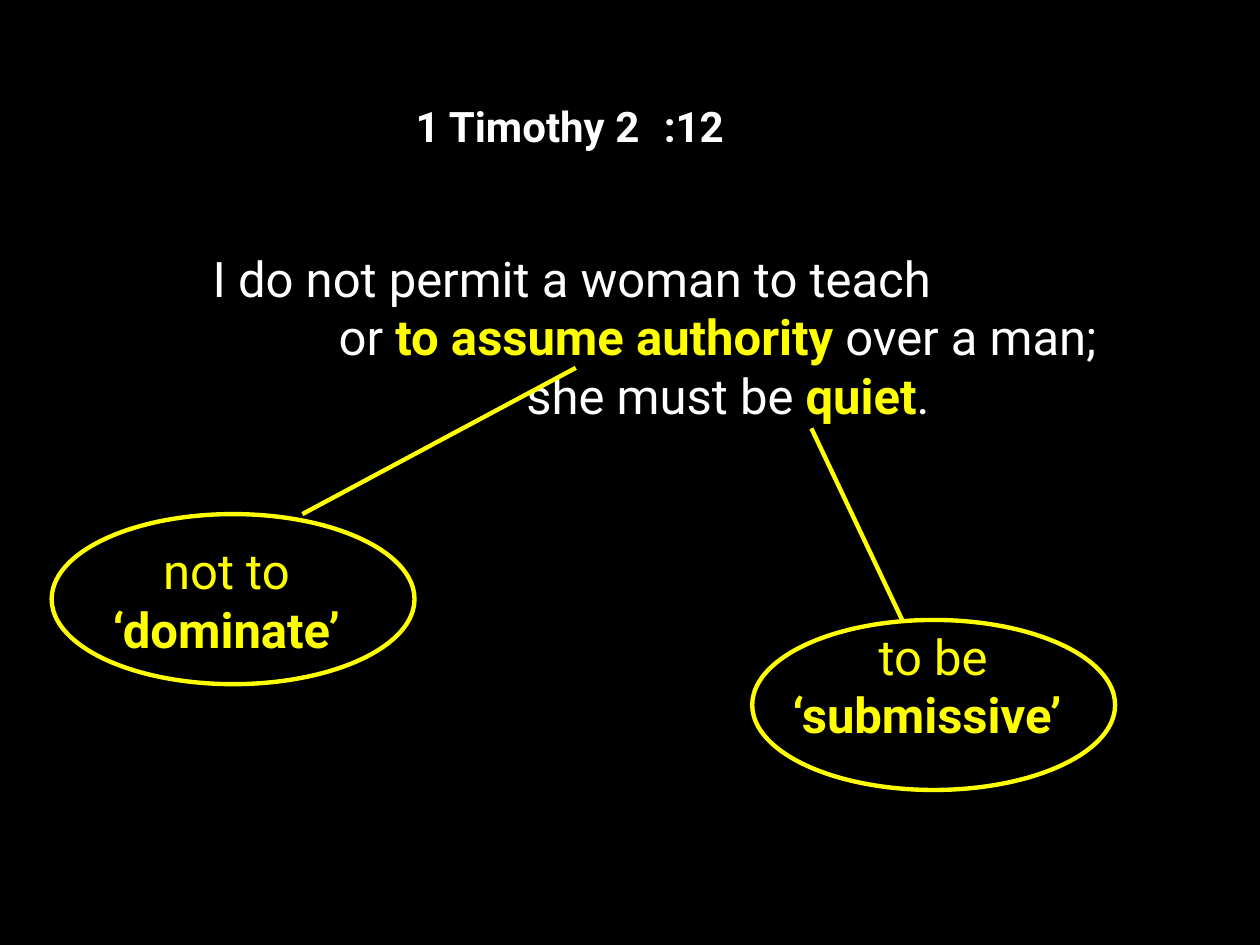
from lxml.etree import SubElement
from pptx import Presentation
from pptx.dml.color import RGBColor
from pptx.enum.shapes import MSO_CONNECTOR, MSO_SHAPE
from pptx.enum.text import MSO_AUTO_SIZE, PP_ALIGN
from pptx.oxml.ns import qn
from pptx.util import Inches, Pt

BLACK = RGBColor(0x00, 0x00, 0x00)
WHITE = RGBColor(0xFF, 0xFF, 0xFF)
YELLOW = RGBColor(0xFF, 0xFF, 0x00)
FONT = "Roboto"
LINE_WIDTH = Pt(2.5)

PLAIN = (WHITE, False)
STRONG = (WHITE, True)
KEY = (YELLOW, True)
NOTE = (YELLOW, False)

REFERENCE = [("1 Timothy 2\t:12", STRONG)]
REFERENCE_TAB = 1.97
VERSE = [
    (0.98, [("I do not permit a woman to teach", PLAIN)]),
    (1.98, [("or ", PLAIN), ("to assume authority ", KEY), ("over a man;", PLAIN)]),
    (3.47, [("she must be ", PLAIN), ("quiet", KEY), (".", PLAIN)]),
]
CALLOUTS = [
    {
        "lines": [[("not to ", NOTE)], [("‘dominate’ ", KEY)]],
        "text_at": (0, 4.24),
        "oval_at": (0.41, 4.08),
        "line": (4.57, 2.92, 2.4, 4.08),
    },
    {
        "lines": [[("to be", NOTE)], [("‘submissive’ ", KEY)]],
        "text_at": (5.56, 4.92),
        "oval_at": (5.97, 4.92),
        "line": (6.44, 3.4, 7.16, 4.92),
    },
]
CALLOUT_TEXT_SIZE = (3.69, 1.04)
OVAL_SIZE = (2.88, 1.35)


def add_text(page, place, lines, size, align=PP_ALIGN.LEFT, indents=None, tab=None):
    box = page.shapes.add_textbox(*map(Inches, place))
    frame = box.text_frame
    frame.word_wrap = True
    frame.auto_size = MSO_AUTO_SIZE.SHAPE_TO_FIT_TEXT
    for index, spans in enumerate(lines):
        para = frame.add_paragraph() if index else frame.paragraphs[0]
        para.alignment = align
        properties = para._p.get_or_add_pPr()
        if indents:
            properties.set("marL", str(Inches(indents[index])))
        if tab:
            tabs = SubElement(properties, qn("a:tabLst"))
            SubElement(tabs, qn("a:tab"), pos=str(Inches(tab)), algn="l")
        for text, (color, bold) in spans:
            span = para.add_run()
            span.text = text
            span.font.name = FONT
            span.font.size = Pt(size)
            span.font.bold = bold
            span.font.color.rgb = color


def add_callout(page, callout):
    add_text(page, callout["text_at"] + CALLOUT_TEXT_SIZE, callout["lines"], 28,
             PP_ALIGN.CENTER)
    oval = page.shapes.add_shape(
        MSO_SHAPE.OVAL, *map(Inches, callout["oval_at"] + OVAL_SIZE))
    oval.shadow.inherit = False
    oval.fill.background()
    connector = page.shapes.add_connector(
        MSO_CONNECTOR.STRAIGHT, *map(Inches, callout["line"]))
    for outlined in (oval, connector):
        outlined.line.color.rgb = YELLOW
        outlined.line.width = LINE_WIDTH
    SubElement(connector._element.spPr, qn("a:effectLst"))


def main():
    deck = Presentation()
    deck.slide_width = Inches(10)
    deck.slide_height = Inches(7.5)
    page = deck.slides.add_slide(deck.slide_layouts[6])
    page.background.fill.solid()
    page.background.fill.fore_color.rgb = BLACK

    add_text(page, (3.2, 0.75, 3.5, 0.6), [REFERENCE], 24, tab=REFERENCE_TAB)
    indents, lines = zip(*VERSE)
    add_text(page, (0.61, 1.92, 9.39, 1.6), lines, 28, indents=indents)
    for callout in CALLOUTS:
        add_callout(page, callout)

    deck.save("out.pptx")


if __name__ == "__main__":
    main()
